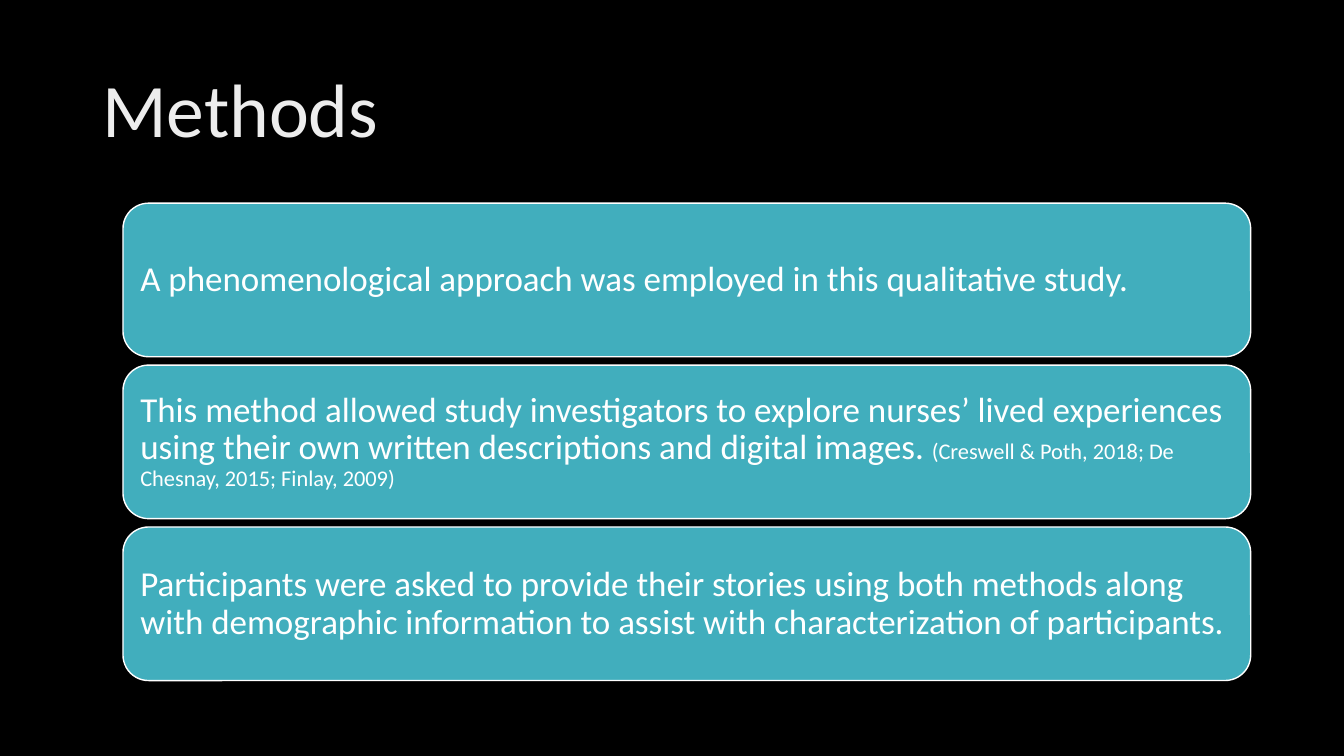
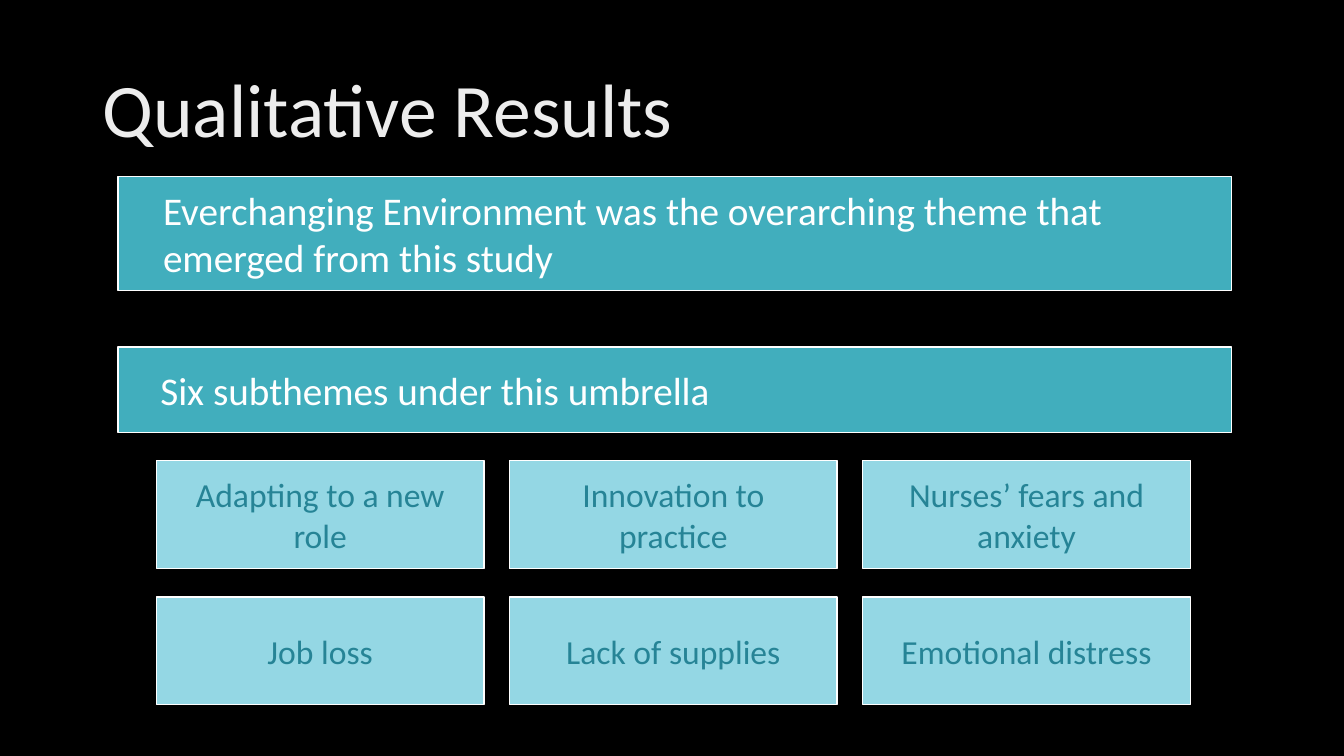
import pptx
import pptx.util
import pptx.dml.color
import pptx.enum.shapes
import pptx.enum.text

Cm, Pt = pptx.util.Cm, pptx.util.Pt
KIND = pptx.enum.shapes.MSO_SHAPE
ALIGN = pptx.enum.text.PP_ALIGN
MIDDLE = pptx.enum.text.MSO_ANCHOR.MIDDLE

COLORS = {"back": "000000", "title": "EDEDED", "teal": "41AEBD",
          "pale": "94D7E4", "deep": "268496", "white": "FFFFFF"}
FONT = "Calibri"

# Each card is a list of (text, size) runs.
METHODS = [
    [("A phenomenological approach was employed in this qualitative study.", 25)],
    [("This method allowed study investigators to explore nurses’ lived experiences "
      "using their own written descriptions and digital images. ", 25),
     ("(Creswell & Poth, 2018; De Chesnay, 2015; Finlay, 2009)", 16)],
    [("Participants were asked to provide their stories using both methods along with "
      "demographic information to assist with characterization of participants.", 25)],
]
# Text, top, height, left inset
BANNERS = [
    ("Everchanging Environment was the overarching theme that emerged from this study",
     4.45, 2.87, 1.14),
    ("Six subthemes under this umbrella", 8.74, 2.16, 1.07),
]
THEMES = [
    ["Adapting to a new role", "Innovation to practice", "Nurses’ fears and anxiety"],
    ["Job loss", "Lack of supplies", "Emotional distress"],
]

CARD = {"left": 3.1, "top": 5.12, "width": 28.42, "height": 3.87, "step": 4.08}
BANNER = {"left": 2.97, "width": 28.07}
TILE = {"left": 3.94, "top": 11.61, "width": 8.26, "height": 2.72,
        "across": 8.9, "down": 3.43}


def color(name):
    return pptx.dml.color.RGBColor.from_string(COLORS[name])


def write(shape, runs, ink="white", align=ALIGN.LEFT, space=1.0, side=0.25, edge=0.18):
    """Fill a shape with one paragraph; side and edge are insets in cm."""
    frame = shape.text_frame
    look = {"word_wrap": True, "vertical_anchor": MIDDLE,
            "margin_left": Cm(side), "margin_right": Cm(side),
            "margin_top": Cm(edge), "margin_bottom": Cm(edge)}
    for name, value in look.items():
        setattr(frame, name, value)
    para = frame.paragraphs[0]
    para.alignment, para.line_spacing = align, space
    for text, size in runs:
        run = para.add_run()
        run.text = text
        for name, value in {"name": FONT, "size": Pt(size)}.items():
            setattr(run.font, name, value)
        run.font.color.rgb = color(ink)


def panel(slide, kind, box, fill):
    shape = slide.shapes.add_shape(kind, *map(Cm, box))
    shape.shadow.inherit = False
    shape.fill.solid()
    shape.fill.fore_color.rgb = color(fill)
    shape.line.color.rgb = color("white")
    shape.line.width = Pt(1)
    return shape


def start(deck, title):
    """Add a slide with its title."""
    slide = deck.slides.add_slide(deck.slide_layouts[6])
    box = slide.shapes.add_textbox(Cm(2.33), Cm(1.02), Cm(29.21), Cm(3.68))
    write(box, [(title, 54)], "title", space=0.9)
    return slide


def methods(deck):
    slide = start(deck, "Methods")
    for row, runs in enumerate(METHODS):
        top = CARD["top"] + row * CARD["step"]
        box = (CARD["left"], top, CARD["width"], CARD["height"])
        write(panel(slide, KIND.ROUNDED_RECTANGLE, box, "teal"), runs, space=0.9)


def results(deck):
    slide = start(deck, "Qualitative Results")
    for text, top, height, side in BANNERS:
        box = (BANNER["left"], top, BANNER["width"], height)
        write(panel(slide, KIND.RECTANGLE, box, "teal"), [(text, 28)], side=side)
    for row, names in enumerate(THEMES):
        for col, name in enumerate(names):
            box = (TILE["left"] + col * TILE["across"],
                   TILE["top"] + row * TILE["down"], TILE["width"], TILE["height"])
            write(panel(slide, KIND.RECTANGLE, box, "pale"), [(name, 24)],
                  "deep", ALIGN.CENTER, side=0.58)


def main():
    deck = pptx.Presentation()
    deck.slide_width, deck.slide_height = Cm(33.87), Cm(19.05)
    back = deck.slide_master.background.fill
    back.solid()
    back.fore_color.rgb = color("back")
    methods(deck)
    results(deck)
    deck.save("out.pptx")


if __name__ == "__main__":
    main()
